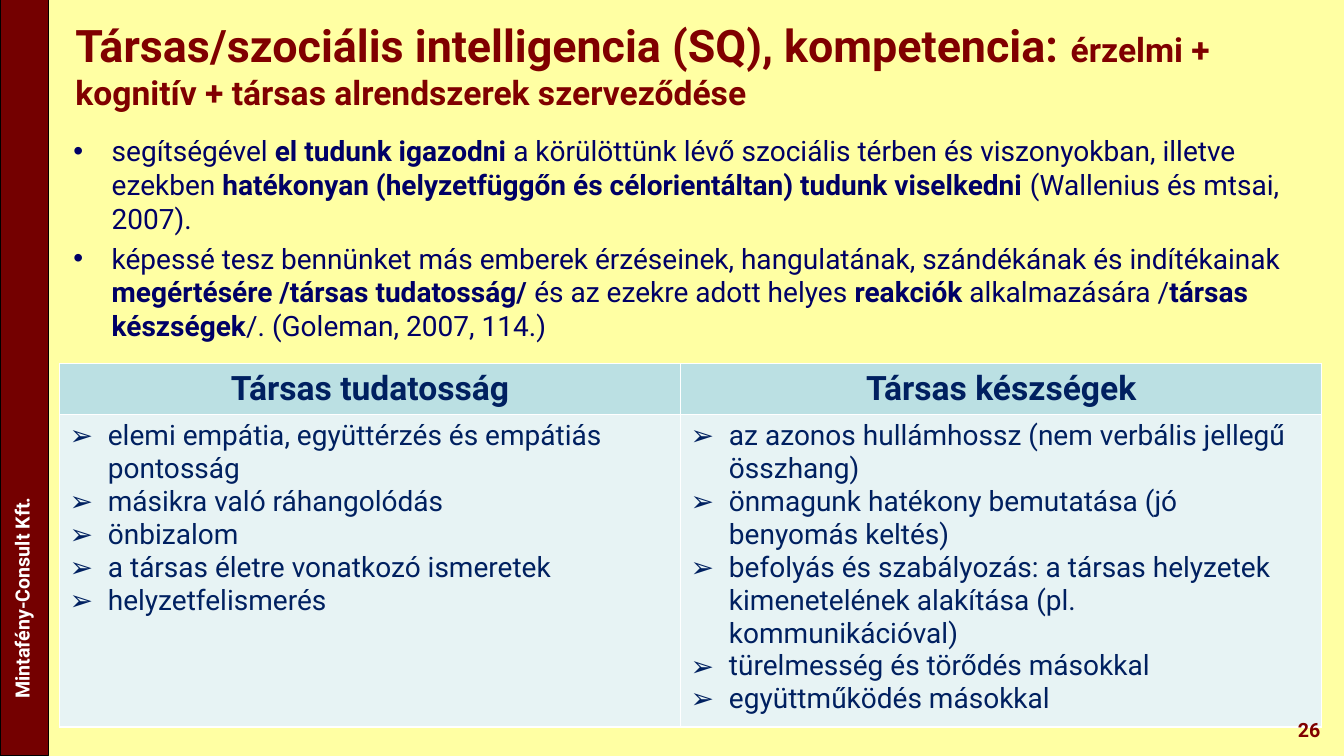
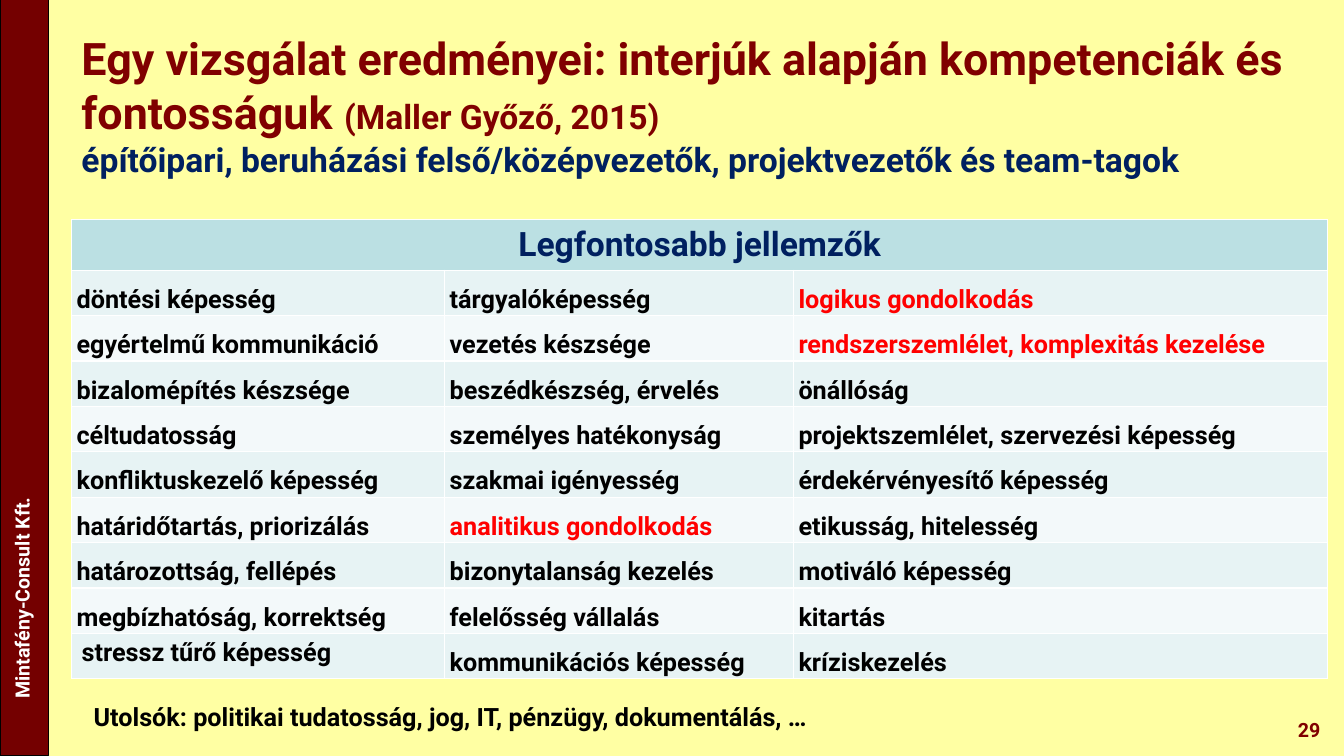
import pptx
import pptx.util
import pptx.dml.color
import pptx.enum.shapes
import pptx.enum.text
import pptx.oxml.ns
from lxml import etree

Inches = pptx.util.Inches
Pt = pptx.util.Pt
ALIGN = pptx.enum.text.PP_ALIGN
ANCHOR = pptx.enum.text.MSO_ANCHOR
qn = pptx.oxml.ns.qn

COLORS = {
    "background": "FFFFA3", "band": "740000", "title": "800000",
    "body": "000066", "navy": "002060", "header": "BBE0E3",
    "row_dark": "E7F3F4", "row_light": "F3F9FA",
    "black": "000000", "white": "FFFFFF", "accent": "FF0000",
}
FONT = "Roboto"


def rgb(name):
    return pptx.dml.color.RGBColor.from_string(COLORS[name])


def write_text(para, text, size=20, color="black", bold=False):
    """Add one formatted span; a newline in the text becomes a line break."""
    for index, part in enumerate(text.split("\n")):
        if index:
            para.add_line_break()
        if part:
            span = para.add_run()
            span.text = part
            span.font.name = FONT
            span.font.size = Pt(size)
            span.font.bold = bold
            span.font.color.rgb = rgb(color)


def set_bullet(para, symbol):
    properties = para._p.get_or_add_pPr()
    properties.set("marL", str(Inches(0.38)))
    properties.set("indent", str(-Inches(0.38)))
    etree.SubElement(properties, qn("a:buFont")).set("typeface", "Arial")
    etree.SubElement(properties, qn("a:buChar")).set("char", symbol)


class Presenter:
    """Holds the shared style and the current page."""

    def __init__(self):
        self.deck = pptx.Presentation()
        self.deck.slide_width = Inches(13.33)
        self.deck.slide_height = Inches(7.5)
        background = self.deck.slide_master.background.fill
        background.solid()
        background.fore_color.rgb = rgb("background")
        self.page = None

    def new_page(self):
        self.page = self.deck.slides.add_slide(self.deck.slide_layouts[6])
        # Side band with the company name
        band = self.page.shapes.add_shape(
            pptx.enum.shapes.MSO_SHAPE.RECTANGLE,
            0, 0, Inches(0.48), self.deck.slide_height)
        band.shadow.inherit = False
        band.fill.solid()
        band.fill.fore_color.rgb = rgb("band")
        band.line.color.rgb = rgb("black")
        band.line.width = Pt(0.75)
        label = self.text(-1.22, 5.42, 2.88, 0.34, [
            [("Mintafény-Consult Kft.", {})]], size=14, color="white", bold=True)
        label.rotation = 270

    def page_number(self, number):
        self.text(12.78, 7.12, 0.41, 0.25, [[(str(number), {})]], margin=0,
                  align=ALIGN.CENTER, size=14, color="title", bold=True)

    def text(self, left, top, width, height, paragraphs, anchor=ANCHOR.TOP,
             align=ALIGN.LEFT, margin=None, bullet=None, gap=0, **style):
        """Each paragraph is a list of (text, format changes)."""
        box = self.page.shapes.add_textbox(
            Inches(left), Inches(top), Inches(width), Inches(height))
        frame = box.text_frame
        frame.word_wrap = True
        frame.vertical_anchor = anchor
        if margin is not None:
            frame.margin_left = frame.margin_right = Inches(margin)
            frame.margin_top = frame.margin_bottom = Inches(margin)
        for index, spans in enumerate(paragraphs):
            para = frame.add_paragraph() if index else frame.paragraphs[0]
            para.alignment = align
            if index and gap:
                para.space_before = Pt(gap)
            if bullet:
                set_bullet(para, bullet)
            for text, changes in spans:
                write_text(para, text, **{**style, **changes})
        return box

    def title(self, left, top, width, height, spans):
        self.text(left, top, width, height, [spans], anchor=ANCHOR.MIDDLE,
                  size=32, color="title", bold=True)

    def table(self, left, top, columns, rows):
        """Add a table; its default style draws the white borders."""
        frame = self.page.shapes.add_table(
            len(rows), len(columns), Inches(left), Inches(top),
            Inches(sum(columns)), Inches(sum(rows)))
        table = frame.table
        table.horz_banding = False
        for column, width in zip(table.columns, columns):
            column.width = Inches(width)
        for row, height in zip(table.rows, rows):
            row.height = Inches(height)
        return table

    def cell(self, cell, lines, fill, align=ALIGN.LEFT, bullet=None,
             spacing=None, margins=None, **style):
        cell.fill.solid()
        cell.fill.fore_color.rgb = rgb(fill)
        if margins:
            cell.margin_left = cell.margin_right = Inches(margins[0])
            cell.margin_top = cell.margin_bottom = Inches(margins[1])
        frame = cell.text_frame
        for index, line in enumerate(lines):
            para = frame.add_paragraph() if index else frame.paragraphs[0]
            para.alignment = align
            if spacing:
                para.line_spacing = spacing
            if bullet:
                set_bullet(para, bullet)
            write_text(para, line, **style)

    def header_cell(self, cell, text):
        self.cell(cell, [text], "header", align=ALIGN.CENTER,
                  size=24, color="navy", bold=True)


def social_intelligence(show):
    show.new_page()
    show.title(0.65, 0.12, 12.46, 1.05, [
        ("Társas/szociális intelligencia (SQ), kompetencia: ", {}),
        ("érzelmi + kognitív + társas alrendszerek szerveződése", {"size": 24})])

    strong = {"bold": True}
    show.text(0.63, 1.28, 12.46, 2.3, [
        [("segítségével ", {}),
         ("el tudunk igazodni ", strong),
         ("a körülöttünk lévő szociális térben és viszonyokban, "
          "illetve ezekben ", {}),
         ("hatékonyan (helyzetfüggőn és célorientáltan) tudunk viselkedni ",
          strong),
         ("(Wallenius és mtsai, 2007).", {})],
        [("képessé tesz bennünket más emberek érzéseinek, hangulatának, "
          "szándékának és indítékainak ", {}),
         ("megértésére /társas tudatosság/ ", strong),
         ("és az ezekre adott helyes ", {}),
         ("reakciók ", strong),
         ("alkalmazására /", {}),
         ("társas készségek", strong),
         ("/. (Goleman, 2007, 114.)", {})],
    ], bullet="•", gap=4.7, size=20, color="body")

    # Two lists side by side
    skills = {
        "Társas tudatosság": [
            "elemi empátia, együttérzés és empátiás pontosság",
            "másikra való ráhangolódás",
            "önbizalom",
            "a társas életre vonatkozó ismeretek",
            "helyzetfelismerés"],
        "Társas készségek": [
            "az azonos hullámhossz (nem verbális jellegű összhang)",
            "önmagunk hatékony bemutatása (jó benyomás keltés)",
            "befolyás és szabályozás: a társas helyzetek kimenetelének "
            "alakítása (pl. kommunikációval)",
            "türelmesség és törődés másokkal",
            "együttműködés másokkal"],
    }
    table = show.table(0.59, 3.61, [6.16, 6.36], [0.5, 2.99])
    for column, (heading, items) in enumerate(skills.items()):
        show.header_cell(table.cell(0, column), heading)
        show.cell(table.cell(1, column), items, "row_dark", bullet="➢",
                  size=20, color="navy")
    show.page_number(26)


def survey_results(show):
    show.new_page()
    show.title(0.71, 0.29, 12.33, 1.5, [
        ("Egy vizsgálat eredményei: interjúk alapján kompetenciák és "
         "fontosságuk ", {}),
        ("(Maller Győző, 2015)\n", {"size": 24}),
        ("építőipari, beruházási felső/középvezetők, projektvezetők és "
         "team-tagok", {"size": 24, "color": "navy"})])

    # Competence table
    traits = [
        ("döntési képesség", "tárgyalóképesség", "logikus gondolkodás"),
        ("egyértelmű kommunikáció", "vezetés készsége",
         "rendszerszemlélet, komplexitás kezelése"),
        ("bizalomépítés készsége", "beszédkészség, érvelés", "önállóság"),
        ("céltudatosság", "személyes hatékonyság",
         "projektszemlélet, szervezési képesség"),
        ("konfliktuskezelő képesség", "szakmai igényesség",
         "érdekérvényesítő képesség"),
        ("határidőtartás, priorizálás", "analitikus gondolkodás",
         "etikusság, hitelesség"),
        ("határozottság, fellépés", "bizonytalanság kezelés",
         "motiváló képesség"),
        ("megbízhatóság, korrektség", "felelősség vállalás", "kitartás"),
        ("stressz tűrő képesség", "kommunikációs képesség", "kríziskezelés"),
    ]
    highlighted = {"logikus gondolkodás", "analitikus gondolkodás",
                   "rendszerszemlélet, komplexitás kezelése"}
    table = show.table(0.71, 2.18, [3.7, 3.46, 5.3], [0.41] * (len(traits) + 1))
    table.cell(0, 0).merge(table.cell(0, 2))
    show.header_cell(table.cell(0, 0), "Legfontosabb jellemzők")
    for row, names in enumerate(traits, start=1):
        for column, name in enumerate(names):
            # The last trait of the first column is set with normal spacing
            loose = not (row == len(traits) and column == 0)
            show.cell(table.cell(row, column), [name],
                      "row_dark" if row % 2 else "row_light",
                      align=ALIGN.JUSTIFY if column else ALIGN.LEFT,
                      spacing=1.5 if loose else None,
                      margins=(0.05, 0) if loose else None,
                      color="accent" if name in highlighted else "black",
                      size=18, bold=True)

    show.text(0.83, 6.91, 11.11, 0.4, [
        [("Utolsók: politikai tudatosság, jog, IT, pénzügy, dokumentálás, …",
          {})]], size=18, bold=True)
    show.page_number(29)


def main():
    show = Presenter()
    social_intelligence(show)
    survey_results(show)
    show.deck.save("out.pptx")


if __name__ == "__main__":
    main()
